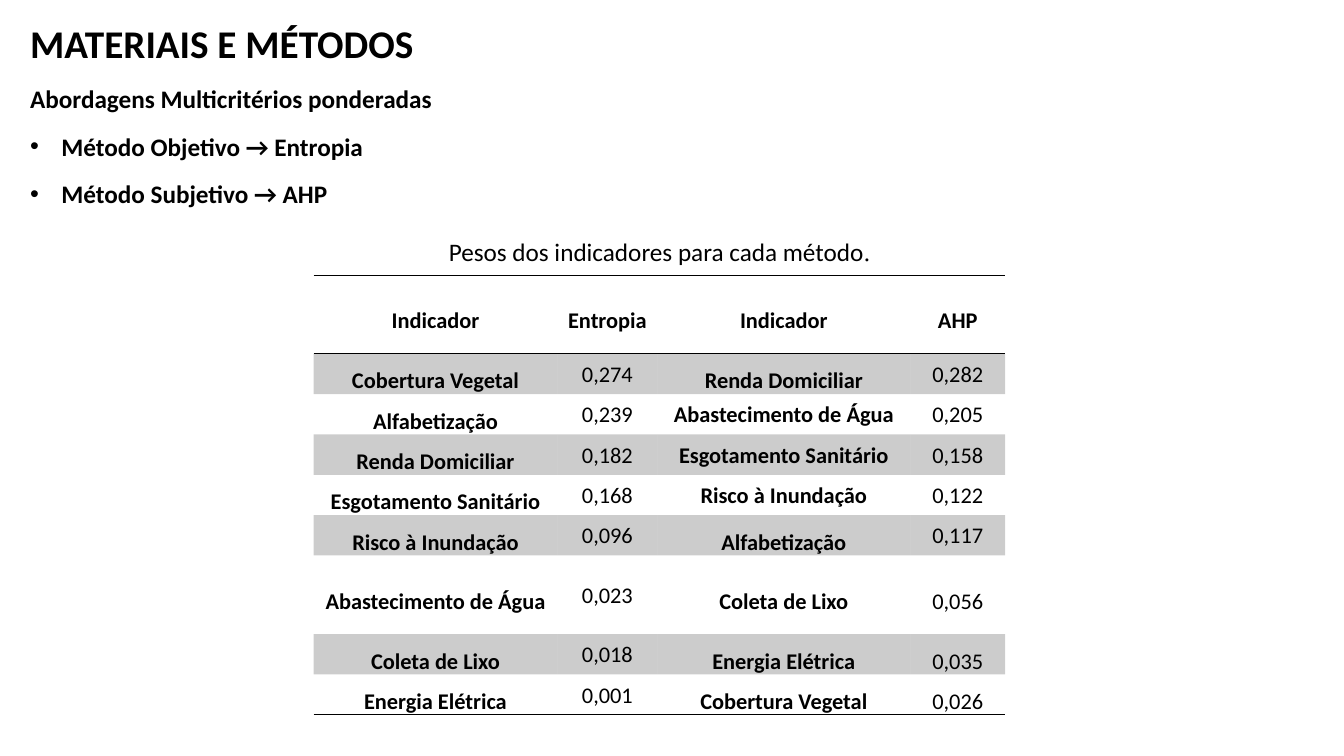
from lxml.etree import SubElement
from pptx import Presentation
from pptx.dml.color import RGBColor
from pptx.enum.text import MSO_ANCHOR, MSO_AUTO_SIZE, PP_ALIGN
from pptx.oxml import parse_xml
from pptx.oxml.ns import nsdecls, qn
from pptx.util import Inches, Pt

BLACK = RGBColor(0x00, 0x00, 0x00)
PLAIN_TABLE_STYLE = "{2D5ABB26-0587-4C30-8999-92F81FD0307C}"

WEIGHTS = [
    ("Indicador", "Entropia", "Indicador", "AHP"),
    ("Cobertura Vegetal", "0,274", "Renda Domiciliar", "0,282"),
    ("Alfabetização", "0,239", "Abastecimento de Água", "0,205"),
    ("Renda Domiciliar", "0,182", "Esgotamento Sanitário", "0,158"),
    ("Esgotamento Sanitário", "0,168", "Risco à Inundação", "0,122"),
    ("Risco à Inundação", "0,096", "Alfabetização", "0,117"),
    ("Abastecimento de Água", "0,023", "Coleta de Lixo", "0,056"),
    ("Coleta de Lixo", "0,018", "Energia Elétrica", "0,035"),
    ("Energia Elétrica", "0,001", "Cobertura Vegetal", "0,026"),
]
COLUMN_WIDTHS = [2.42, 0.99, 2.51, 0.94]
TALL_ROWS = (0, 6)
TIGHT_ROWS = {0: (), 1: range(1, 9), 2: range(2, 5), 3: range(1, 6)}


class WeightsSlide:
    """Draws headings, bullets and the weights table in one style."""

    font = "Calibri"
    color = BLACK

    def __init__(self, page):
        self.page = page

    def add_span(self, para, text, size, bold=False, font=None):
        span = para.add_run()
        span.text = text
        span.font.size = Pt(size)
        span.font.bold = bold
        span.font.name = font or self.font
        span.font.color.rgb = self.color

    def center(self, para, spacing):
        para.alignment = PP_ALIGN.CENTER
        para.line_spacing = spacing
        para.space_after = Pt(8)

    def add_box(self, left, top, width, height):
        box = self.page.shapes.add_textbox(
            Inches(left), Inches(top), Inches(width), Inches(height))
        box.text_frame.word_wrap = True
        box.text_frame.auto_size = MSO_AUTO_SIZE.SHAPE_TO_FIT_TEXT
        return box.text_frame.paragraphs[0]

    def add_heading(self, text, top, width, height=0.4, size=18):
        para = self.add_box(0.2, top, width, height)
        self.add_span(para, text, size, bold=True)
        return para

    def add_bullet(self, text, top, width):
        para = self.add_heading(text, top, width)
        properties = para._p.get_or_add_pPr()
        properties.set("marL", str(Inches(0.31)))
        properties.set("indent", str(-Inches(0.31)))
        SubElement(properties, qn("a:buFont")).set("typeface", "Arial")
        SubElement(properties, qn("a:buChar")).set("char", "•")

    def add_caption(self, text, ending):
        para = self.add_box(3.93, 2.27, 5.22, 0.41)
        self.center(para, 1.07)
        self.add_span(para, text, 18)
        self.add_span(para, ending, 18, font="Times New Roman")

    def add_border(self, cell, side):
        line = parse_xml(
            f'<a:{side} {nsdecls("a")} w="{Pt(1)}"><a:solidFill>'
            f'<a:srgbClr val="{self.color}"/></a:solidFill></a:{side}>')
        cell._tc.get_or_add_tcPr().insert(0, line)

    def shade(self, cell):
        cell.fill.solid()
        cell.fill.fore_color.rgb = self.color
        color = cell._tc.tcPr.find(".//" + qn("a:srgbClr"))
        SubElement(color, qn("a:alpha")).set("val", "20000")

    def add_cell(self, cell, text, row, column):
        cell.vertical_anchor = MSO_ANCHOR.MIDDLE
        cell.margin_left = cell.margin_right = Inches(0.07)
        cell.margin_top = cell.margin_bottom = 0
        para = cell.text_frame.paragraphs[0]
        self.center(para, 1.07 if row in TIGHT_ROWS[column] else 1.5)
        self.add_span(para, text, 16, bold=row == 0 or column % 2 == 0)
        if row % 2:
            self.shade(cell)
        else:
            cell.fill.background()
        if row in (0, len(WEIGHTS) - 1):
            self.add_border(cell, "lnB")
        if row == 0:
            self.add_border(cell, "lnT")

    def add_weights_table(self):
        table = self.page.shapes.add_table(
            len(WEIGHTS), len(COLUMN_WIDTHS), Inches(3.11), Inches(2.73),
            Inches(6.86), Inches(4.14)).table
        table.first_row = table.horz_banding = False
        table._tbl.tblPr.find(qn("a:tableStyleId")).text = PLAIN_TABLE_STYLE
        for column, width in enumerate(COLUMN_WIDTHS):
            table.columns[column].width = Inches(width)
        for row, texts in enumerate(WEIGHTS):
            table.rows[row].height = Inches(0.78 if row in TALL_ROWS else 0.37)
            for column, text in enumerate(texts):
                self.add_cell(table.cell(row, column), text, row, column)


def main():
    deck = Presentation()
    deck.slide_width = Inches(13.33)
    deck.slide_height = Inches(7.5)
    slide = WeightsSlide(deck.slides.add_slide(deck.slide_layouts[6]))
    slide.add_heading("MATERIAIS E MÉTODOS", 0.14, 4.39, 0.57, size=28)
    slide.add_heading("Abordagens Multicritérios ponderadas", 0.78, 4.48)
    slide.add_bullet("Método Objetivo → Entropia", 1.25, 4.99)
    slide.add_bullet("Método Subjetivo → AHP", 1.72, 3.31)
    slide.add_weights_table()
    slide.add_caption("Pesos dos indicadores para cada método", ".")
    deck.save("out.pptx")


if __name__ == "__main__":
    main()
